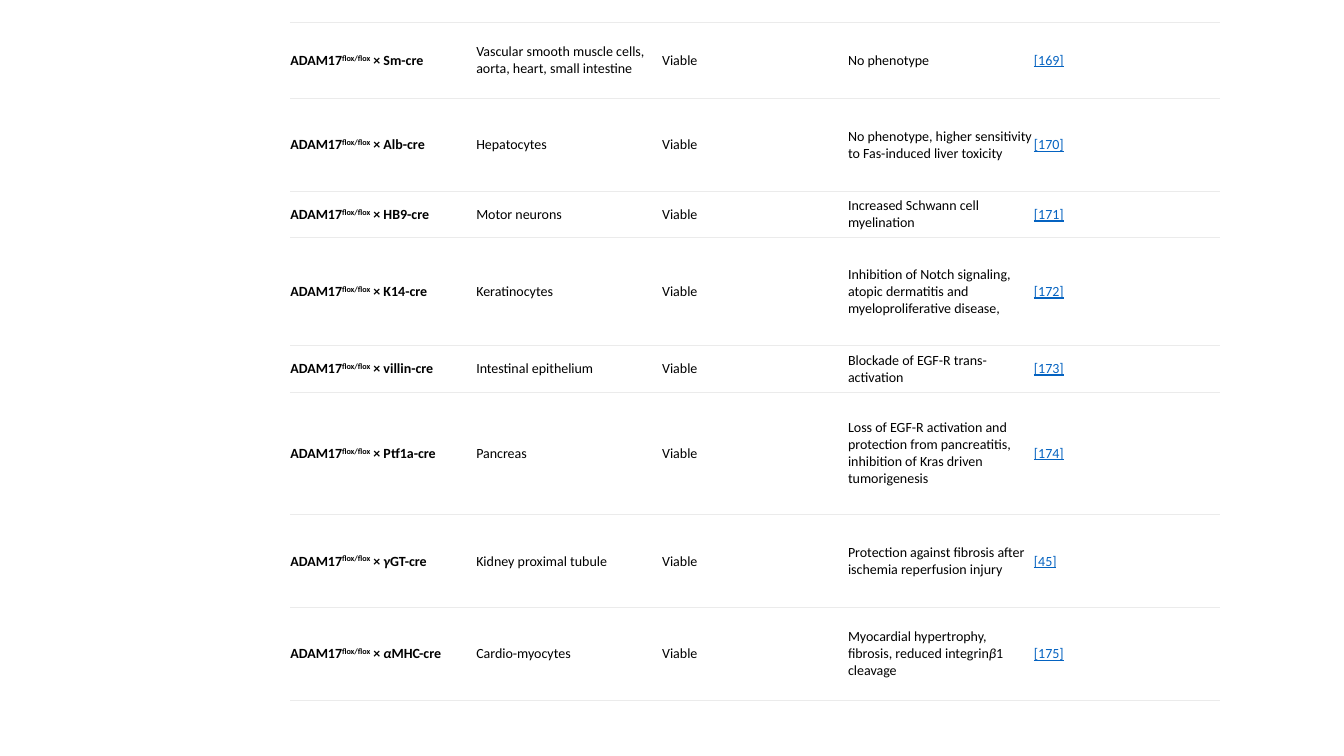
from dataclasses import dataclass
from itertools import groupby

from lxml import etree
from pptx import Presentation
from pptx.dml.color import RGBColor
from pptx.enum import text
from pptx.oxml import ns
from pptx.util import Inches, Pt


@dataclass(frozen=True)
class Theme:
    font: str = "Calibri"
    size: float = 10
    ink: str = "000000"
    citation: str = "0563C1"
    rule: str = "EBEBEB"
    rule_width: float = 0.75
    superscript: int = 30000


THEME = Theme()
GENE, ALLELE = "ADAM17", "flox/flox"
GREEK = "αβγ"

MOUSE_LINES = [
    (0.76, "Sm-cre", "Vascular smooth muscle cells, aorta, heart, small intestine",
     "No phenotype", "[169]"),
    (0.92, "Alb-cre", "Hepatocytes",
     "No phenotype, higher sensitivity to Fas-induced liver toxicity", "[170]"),
    (0.46, "HB9-cre", "Motor neurons", "Increased Schwann cell myelination", "[171]"),
    (1.07, "K14-cre", "Keratinocytes",
     "Inhibition of Notch signaling, atopic dermatitis and myeloproliferative disease,",
     "[172]"),
    (0.46, "villin-cre", "Intestinal epithelium",
     "Blockade of EGF-R trans-activation", "[173]"),
    (1.22, "Ptf1a-cre", "Pancreas",
     "Loss of EGF-R activation and protection from pancreatitis, "
     "inhibition of Kras driven tumorigenesis", "[174]"),
    (0.92, "γGT-cre", "Kidney proximal tubule",
     "Protection against fibrosis after ischemia reperfusion injury", "[45]"),
    (0.92, "αMHC-cre", "Cardio-myocytes",
     "Myocardial hypertrophy, fibrosis, reduced integrinβ1 cleavage", "[175]"),
]


def add_border(properties, side, color=None):
    line = etree.SubElement(properties, ns.qn(f"a:{side}"), w=str(Pt(THEME.rule_width)))
    if color is None:
        etree.SubElement(line, ns.qn("a:noFill"))
    else:
        fill = etree.SubElement(line, ns.qn("a:solidFill"))
        etree.SubElement(fill, ns.qn("a:srgbClr"), val=color)


def style_cell(cell):
    cell.margin_left = cell.margin_right = cell.margin_top = cell.margin_bottom = 0
    cell.vertical_anchor = text.MSO_ANCHOR.MIDDLE
    properties = cell._tc.get_or_add_tcPr()
    for side, color in (("lnL", None), ("lnR", None), ("lnT", THEME.rule), ("lnB", THEME.rule)):
        add_border(properties, side, color)
    cell.fill.background()


def style_paragraph(paragraph, color=THEME.ink, bold=False, underline=False):
    font = paragraph.font
    font.name, font.size = THEME.font, Pt(THEME.size)
    font.bold, font.underline = bold, underline
    font.color.rgb = RGBColor.from_string(color)


def add_wording(paragraph, wording):
    for is_greek, letters in groupby(wording, key=lambda letter: letter in GREEK):
        run = paragraph.add_run()
        run.text = "".join(letters)
        if is_greek:
            run.font.italic = True


def add_genotype(paragraph, driver):
    add_wording(paragraph, GENE)
    allele = paragraph.add_run()
    allele.text = ALLELE
    allele._r.get_or_add_rPr().set("baseline", str(THEME.superscript))
    add_wording(paragraph, f" × {driver}")


def add_mouse_table(slide, left, top, width):
    heights = [line[0] for line in MOUSE_LINES]
    table = slide.shapes.add_table(
        len(MOUSE_LINES), 5, Inches(left), Inches(top), Inches(width), Inches(sum(heights))
    ).table
    table.first_row = table.horz_banding = False
    for row, (height, driver, tissue, phenotype, citation) in zip(table.rows, MOUSE_LINES):
        row.height = Inches(height)
        for cell in row.cells:
            style_cell(cell)
        genotype, *descriptions, reference = [cell.text_frame.paragraphs[0] for cell in row.cells]
        style_paragraph(genotype, bold=True)
        add_genotype(genotype, driver)
        for paragraph, wording in zip(descriptions, (tissue, "Viable", phenotype)):
            style_paragraph(paragraph)
            add_wording(paragraph, wording)
        style_paragraph(reference, THEME.citation, underline=True)
        add_wording(reference, citation)


def main():
    deck = Presentation()
    deck.slide_width, deck.slide_height = Inches(13.33), Inches(7.5)
    slide = deck.slides.add_slide(deck.slide_layouts[6])
    add_mouse_table(slide, 2.88, 0.22, 9.22)
    deck.save("out.pptx")


if __name__ == "__main__":
    main()
